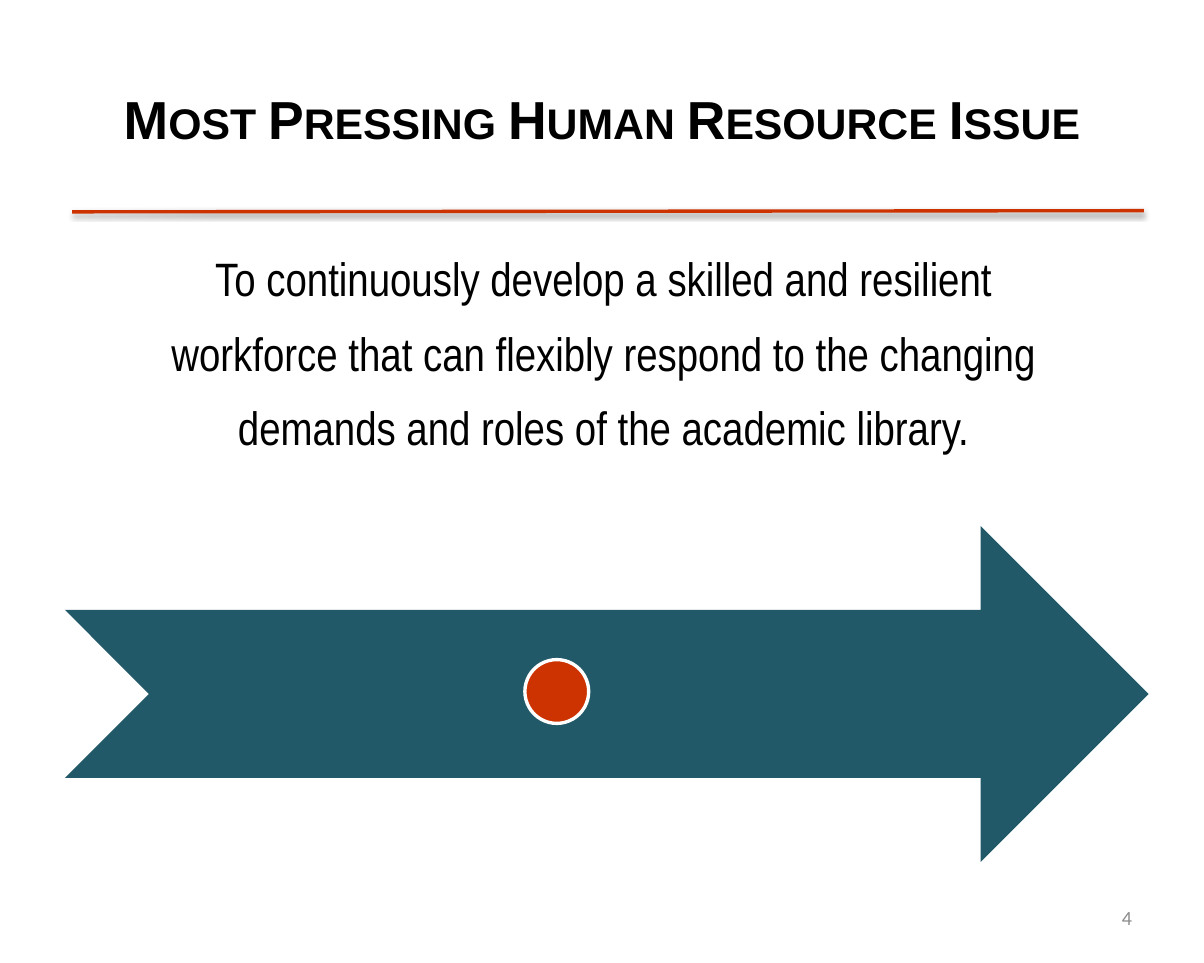
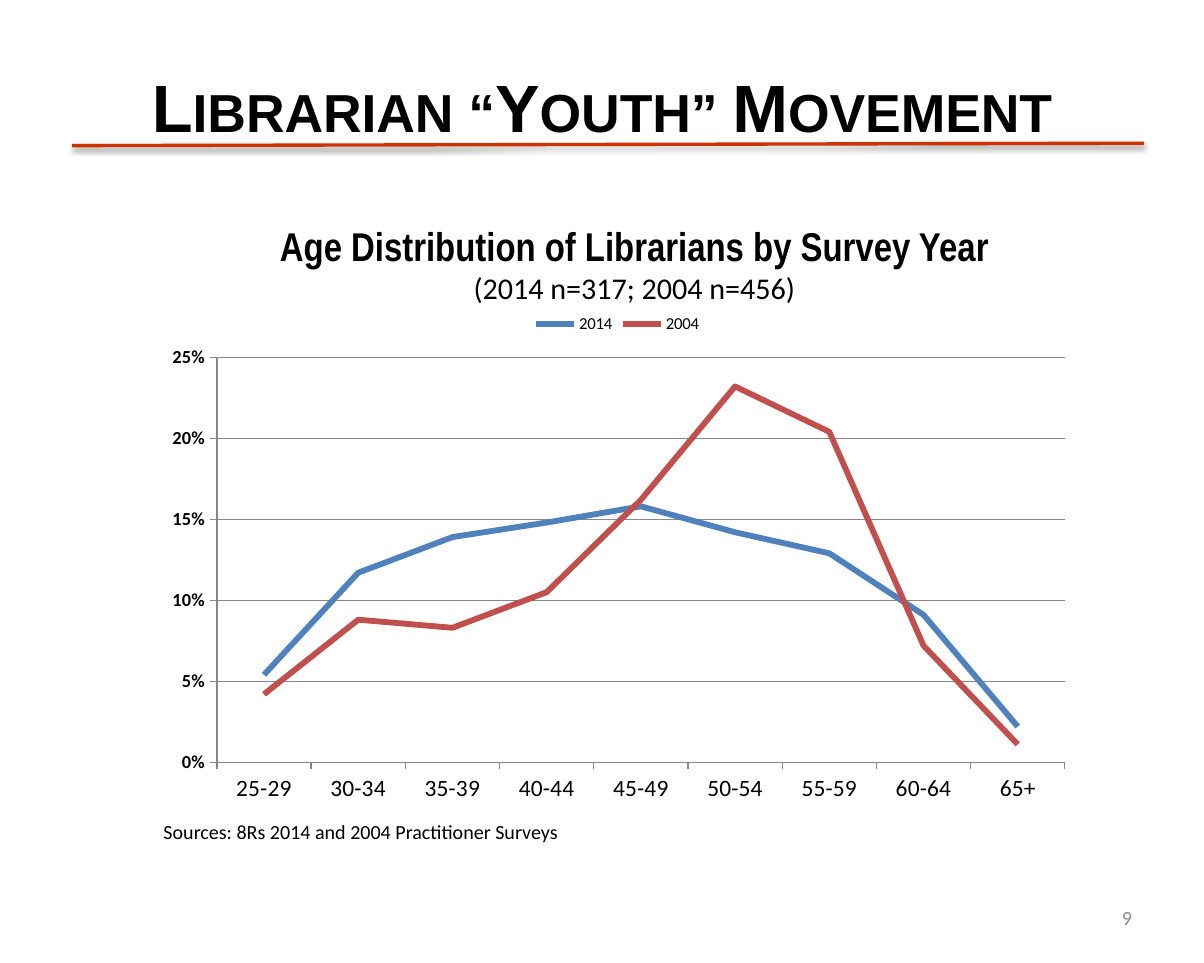
"""Build two slides on library staffing: a key issue and an age chart."""
from lxml.etree import SubElement
from pptx import Presentation
from pptx.chart.data import CategoryChartData
from pptx.dml.color import RGBColor
from pptx.enum.chart import XL_CHART_TYPE, XL_LEGEND_POSITION, XL_TICK_MARK
from pptx.enum.shapes import MSO_CONNECTOR, MSO_SHAPE
from pptx.enum.text import MSO_ANCHOR, PP_ALIGN
from pptx.oxml import parse_xml
from pptx.oxml.ns import nsdecls, qn
from pptx.util import Inches, Pt

BLACK = RGBColor(0x00, 0x00, 0x00)
WHITE = RGBColor(0xFF, 0xFF, 0xFF)
GRAY = RGBColor(0x8C, 0x8C, 0x8C)
GRID = RGBColor(0x87, 0x87, 0x87)
TEAL = RGBColor(0x21, 0x59, 0x68)
RED = RGBColor(0xCC, 0x33, 0x00)

ISSUE_LINES = [
    "To continuously develop a skilled and resilient",
    "workforce that can flexibly respond to the changing",
    "demands and roles of the academic library.",
]
AGE_GROUPS = ["25-29", "30-34", "35-39", "40-44", "45-49", "50-54", "55-59", "60-64", "65+"]
AGE_SHARES = [
    ("2014", RGBColor(0x4F, 0x81, 0xBD),
     [0.054, 0.117, 0.139, 0.148, 0.158, 0.142, 0.129, 0.091, 0.022]),
    ("2004", RGBColor(0xC0, 0x50, 0x4D),
     [0.042, 0.088, 0.083, 0.105, 0.162, 0.232, 0.204, 0.072, 0.011]),
]
PLOT_AREA = {"x": 0.07, "y": 0.11, "w": 0.91, "h": 0.79}
RULE_SHADOW = (
    f'<a:effectLst {nsdecls("a")}>'
    '<a:outerShdw blurRad="39370" dist="20320" dir="5400000" rotWithShape="0">'
    '<a:srgbClr val="000000"><a:alpha val="38000"/></a:srgbClr>'
    '</a:outerShdw></a:effectLst>'
)


def add_text_box(page, place, anchor=MSO_ANCHOR.TOP, inset=None):
    """Add an empty wrapping text box and return its text frame."""
    frame = page.shapes.add_textbox(*map(Inches, place)).text_frame
    frame.word_wrap = True
    frame.vertical_anchor = anchor
    if inset is not None:
        frame.margin_left = frame.margin_right = Inches(inset)
        frame.margin_top = frame.margin_bottom = Inches(inset)
    return frame


def write_lines(frame, lines, name, size, color=BLACK, bold=False, align=PP_ALIGN.CENTER):
    """Write lines as paragraphs in one style and return those paragraphs."""
    paragraphs = []
    for line in lines:
        used = bool(frame.paragraphs[0].text)
        paragraph = frame.add_paragraph() if used else frame.paragraphs[0]
        paragraph.text = line
        paragraph.alignment = align
        font = paragraph.font
        font.name, font.size, font.bold = name, Pt(size), bold
        font.color.rgb = color
        paragraphs.append(paragraph)
    return paragraphs


def add_rule(page, start, end):
    """Draw the red title rule with its soft shadow."""
    rule = page.shapes.add_connector(MSO_CONNECTOR.STRAIGHT, *map(Inches, start + end))
    rule.line.color.rgb = RED
    rule.line.width = Pt(2)
    rule._element.spPr.append(parse_xml(RULE_SHADOW))


def add_page(deck, title, size, title_height, rule_start, rule_end, number):
    """Add a page with small-caps title, rule and page number."""
    page = deck.slides.add_slide(deck.slide_layouts[6])
    frame = add_text_box(page, (0.5, 0.32, 9, title_height), MSO_ANCHOR.MIDDLE)
    paragraph = write_lines(frame, [title], "Arial", size, bold=True)[0]
    paragraph.runs[0].font._element.set("cap", "small")
    add_rule(page, (0.6, rule_start), (9.5, rule_end))
    frame = add_text_box(page, (7.17, 7.41, 2.33, 0.43), MSO_ANCHOR.MIDDLE)
    write_lines(frame, [str(number)], "Calibri", 12, GRAY, align=PP_ALIGN.RIGHT)
    return page


def add_solid(page, kind, place, fill, outline=None):
    """Add a flat preset shape, outlined only on request."""
    shape = page.shapes.add_shape(kind, *map(Inches, place))
    shape.shadow.inherit = False
    shape.fill.solid()
    shape.fill.fore_color.rgb = fill
    if outline is None:
        shape.line.fill.background()
    else:
        shape.line.color.rgb = outline
        shape.line.width = Pt(2)


def place_plot(chart):
    """Fix the inner plot area to fractions of the chart frame."""
    plot_area = chart._chartSpace.chart.plotArea
    for old in plot_area.findall(qn("c:layout")):
        plot_area.remove(old)
    layout = parse_xml(f'<c:layout {nsdecls("c")}/>')
    plot_area.insert(0, layout)
    manual = SubElement(layout, qn("c:manualLayout"))
    settings = {"layoutTarget": "inner", "xMode": "edge", "yMode": "edge", **PLOT_AREA}
    for tag, value in settings.items():
        SubElement(manual, qn(f"c:{tag}")).set("val", str(value))


def style_axis(axis, size, bold=False):
    """Give an axis its tick marks, line and label font."""
    axis.major_tick_mark = XL_TICK_MARK.OUTSIDE
    axis.minor_tick_mark = XL_TICK_MARK.NONE
    axis.format.line.color.rgb = GRID
    axis.tick_labels.font.size = Pt(size)
    axis.tick_labels.font.bold = bold


def add_age_chart(page, place):
    """Add the line chart of age shares by survey year."""
    data = CategoryChartData(number_format="0.0%")
    data.categories = AGE_GROUPS
    for year, _, shares in AGE_SHARES:
        data.add_series(year, shares)
    chart = page.shapes.add_chart(XL_CHART_TYPE.LINE, *map(Inches, place), data).chart
    chart.has_title = False
    chart.font.name, chart.font.size = "Calibri", Pt(10)
    chart.font.color.rgb = BLACK
    chart.has_legend = True
    chart.legend.position = XL_LEGEND_POSITION.TOP
    chart.legend.include_in_layout = False
    plot = chart.plots[0]
    plot.vary_by_categories = False
    for series, (_, color, _) in zip(plot.series, AGE_SHARES):
        series.smooth = False
        series.format.line.color.rgb = color
        series.format.line.width = Pt(3.5)
    style_axis(chart.category_axis, 14)
    values = chart.value_axis
    style_axis(values, 11, bold=True)
    values.minimum_scale, values.maximum_scale, values.major_unit = 0, 0.25, 0.05
    values.tick_labels.number_format = "0%"
    values.tick_labels.number_format_is_linked = False
    values.has_major_gridlines = True
    values.major_gridlines.format.line.color.rgb = GRID
    place_plot(chart)


def build_issue_page(deck):
    """Build the page that states the main staffing issue."""
    page = add_page(deck, "Most Pressing Human Resource Issue", 32, 1.33, 1.76, 1.75, 4)
    add_solid(page, MSO_SHAPE.NOTCHED_RIGHT_ARROW, (0.54, 4.37, 9, 2.79), TEAL)
    add_solid(page, MSO_SHAPE.OVAL, (4.36, 5.48, 0.53, 0.53), RED, WHITE)
    frame = add_text_box(page, (0.96, 1.89, 8.1, 2.11), MSO_ANCHOR.BOTTOM, 0.22)
    for paragraph in write_lines(frame, ISSUE_LINES, "Arial Narrow", 28):
        paragraph.space_after = Pt(11)


def build_age_page(deck):
    """Build the page that compares librarian ages by survey year."""
    page = add_page(deck, "Librarian “Youth” Movement", 40, 1.11, 1.21, 1.19, 9)
    add_age_chart(page, (1.26, 2.5, 7.74, 4.26))
    frame = add_text_box(page, (1.26, 6.76, 7.74, 0.3))
    sources = ["Sources: 8Rs 2014 and 2004 Practitioner Surveys"]
    write_lines(frame, sources, "Calibri", 12, align=PP_ALIGN.LEFT)
    frame = add_text_box(page, (1.54, 1.79, 7.46, 0.81))
    heading = ["Age Distribution of Librarians by Survey Year"]
    write_lines(frame, heading, "Arial Narrow", 24, bold=True)
    write_lines(frame, ["(2014 n=317; 2004 n=456)"], "Calibri", 18)


def main():
    """Build and save the deck."""
    deck = Presentation()
    deck.slide_width, deck.slide_height = Inches(10), Inches(8)
    build_issue_page(deck)
    build_age_page(deck)
    deck.save("out.pptx")


if __name__ == "__main__":
    main()
